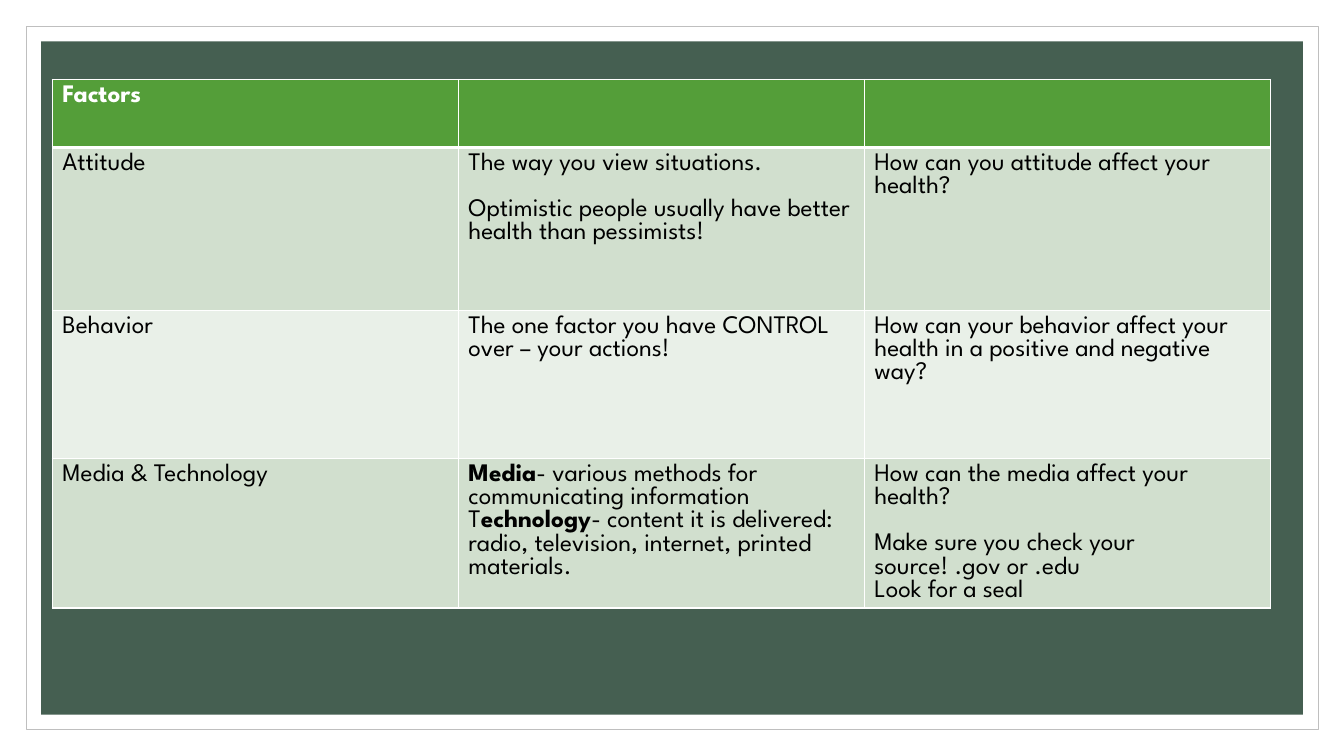
from dataclasses import dataclass

from lxml.etree import SubElement
from pptx import Presentation
from pptx.dml.color import RGBColor as Color
from pptx.enum.shapes import MSO_SHAPE as ShapeKind
from pptx.oxml.ns import qn
from pptx.util import Pt


@dataclass(frozen=True)
class Theme:
    font: str = "League Spartan"
    text_size: float = 18
    block_gap: float = 16.5
    white: str = "FFFFFF"
    black: str = "000000"
    frame: str = "BFBFBF"
    panel: str = "455F51"
    header: str = "549E39"
    bands: tuple = ("D1DFCE", "E9F0E8")
    border: float = 1
    header_border: float = 3


HEADER = [[["Factors"]], [], []]
FACTORS = [
    [
        [["Attitude"]],
        [
            ["The way you view situations."],
            ["Optimistic people usually have better health than pessimists!"],
        ],
        [["How can you attitude affect your health?"]],
    ],
    [
        [["Behavior"]],
        [["The one factor you have CONTROL over – your actions!"]],
        [["How can your behavior affect your health in a positive and negative way?"]],
    ],
    [
        [["Media & Technology"]],
        [[
            "**Media**- various methods for communicating information",
            "T**echnology**- content it is delivered: radio, television, internet, printed materials.",
        ]],
        [
            ["How can the media affect your health?"],
            ["Make sure you check your source! .gov or .edu", "Look for a seal"],
        ],
    ],
]


class SlideBuilder:
    def __init__(self, presentation, theme):
        self.theme = theme
        self.slide = presentation.slides.add_slide(presentation.slide_layouts[6])

    def rectangle(self, left, top, width, height, fill, line=None):
        shape = self.slide.shapes.add_shape(
            ShapeKind.RECTANGLE, Pt(left), Pt(top), Pt(width), Pt(height)
        )
        shape.shadow.inherit = False
        shape.fill.solid()
        shape.fill.fore_color.rgb = Color.from_string(fill)
        if line:
            shape.line.color.rgb = Color.from_string(line)
            shape.line.width = Pt(0.5)
        else:
            shape.line.fill.background()

    def table(self, left, top, column_width, heights, rows):
        theme = self.theme
        columns = len(rows[0])
        table = self.slide.shapes.add_table(
            len(rows), columns, Pt(left), Pt(top),
            Pt(column_width * columns), Pt(sum(heights)),
        ).table
        for column in table.columns:
            column.width = Pt(column_width)
        for index, (height, row) in enumerate(zip(heights, rows)):
            table.rows[index].height = Pt(height)
            is_header = index == 0
            fill = theme.header if is_header else theme.bands[(index - 1) % 2]
            above = theme.header_border if index == 1 else theme.border
            below = theme.header_border if is_header else theme.border
            for cell, blocks in zip(table.rows[index].cells, row):
                self.borders(cell, above, below)
                cell.fill.solid()
                cell.fill.fore_color.rgb = Color.from_string(fill)
                self.cell_text(cell, blocks, is_header)

    def borders(self, cell, above, below):
        properties = cell._tc.get_or_add_tcPr()
        side = self.theme.border
        for tag, width in (("lnL", side), ("lnR", side), ("lnT", above), ("lnB", below)):
            line = SubElement(properties, qn(f"a:{tag}"), w=str(Pt(width)))
            fill = SubElement(line, qn("a:solidFill"))
            SubElement(fill, qn("a:srgbClr"), val=self.theme.white)

    def cell_text(self, cell, blocks, is_header):
        frame = cell.text_frame
        paragraph = frame.paragraphs[0]
        lines = [(block, line) for block, texts in enumerate(blocks)
                 for line in enumerate(texts)]
        for position, (block, (order, text)) in enumerate(lines):
            if position:
                paragraph = frame.add_paragraph()
            if block and order == 0:
                paragraph.space_before = Pt(self.theme.block_gap)
            self.runs(paragraph, text, is_header)

    def runs(self, paragraph, text, is_header):
        color = self.theme.white if is_header else self.theme.black
        for order, part in enumerate(text.split("**")):
            if not part:
                continue
            run = paragraph.add_run()
            run.text = part
            formats = {
                "name": self.theme.font,
                "size": Pt(self.theme.text_size),
                "bold": is_header or order % 2 == 1,
            }
            for name, value in formats.items():
                setattr(run.font, name, value)
            run.font.color.rgb = Color.from_string(color)


def main():
    presentation = Presentation()
    presentation.slide_width = Pt(960)
    presentation.slide_height = Pt(540)
    theme = Theme()
    builder = SlideBuilder(presentation, theme)
    builder.rectangle(18.7, 18.7, 923, 502.6, theme.white, theme.frame)
    builder.rectangle(29.3, 29.5, 901.4, 481, theme.panel)
    builder.table(37.4, 56.7, 290, [48.6, 116.6, 105.8, 105.8], [HEADER, *FACTORS])
    presentation.save("out.pptx")


if __name__ == "__main__":
    main()
